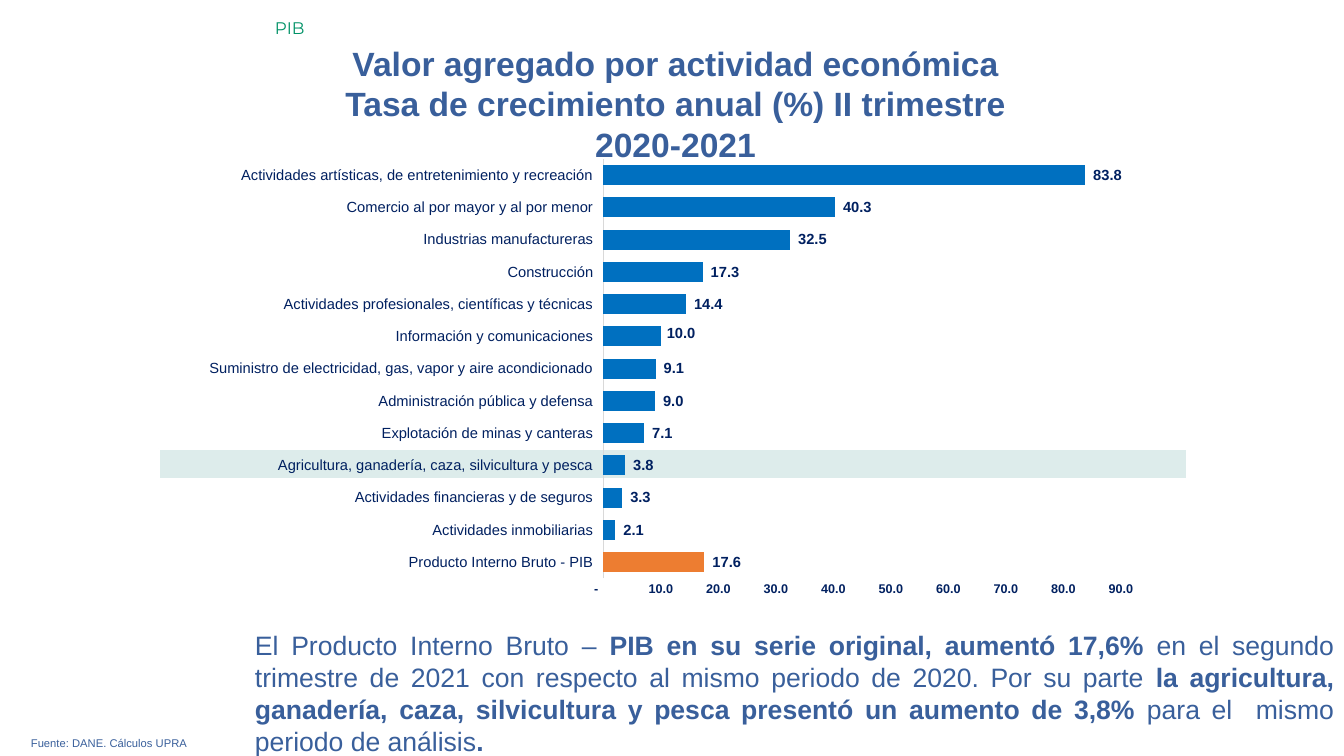
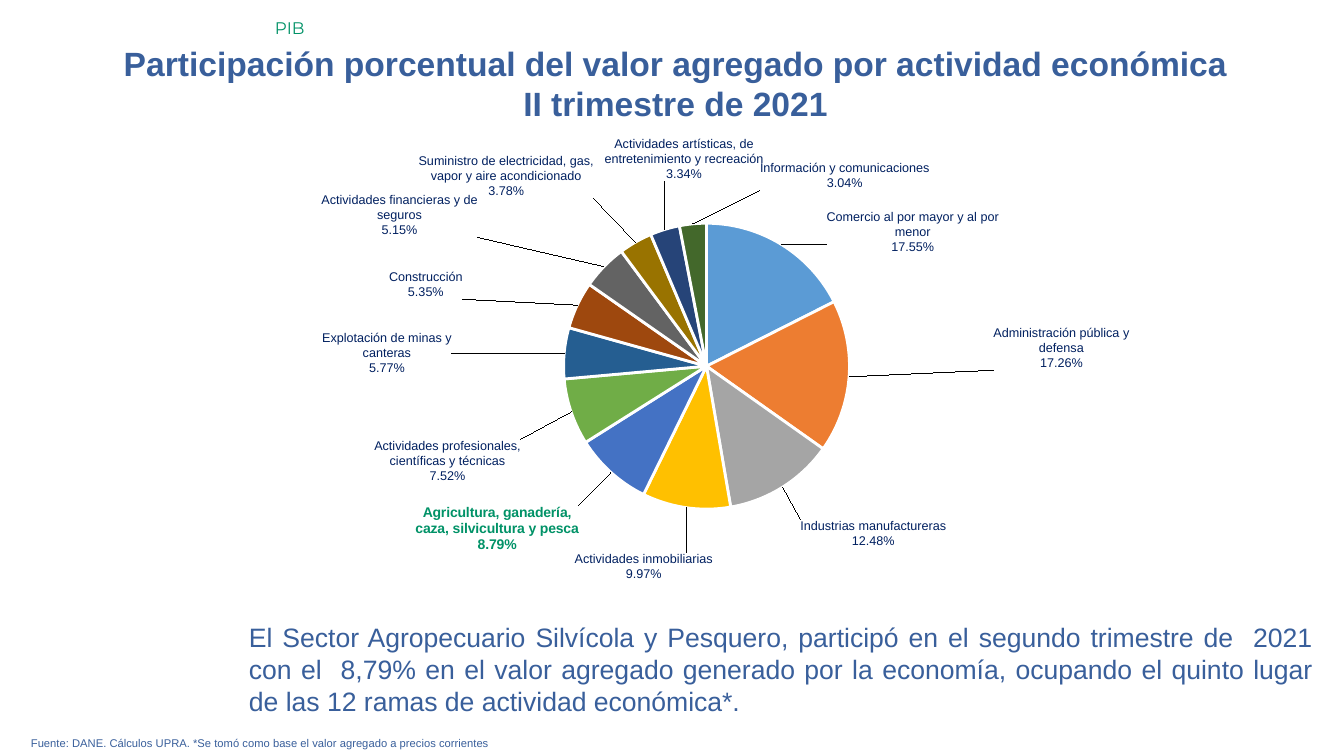
import pptx
import pptx.chart.data
import pptx.dml.color
import pptx.enum.chart
import pptx.enum.shapes
import pptx.enum.text
import pptx.oxml
import pptx.oxml.ns
import pptx.util
import math

PIXEL = 12192000 / 1344
RGBColor = pptx.dml.color.RGBColor
BLUE = RGBColor(0x39, 0x5F, 0x9B)
GREEN = RGBColor(0x00, 0x92, 0x67)
NAVY = RGBColor(0x00, 0x20, 0x60)
BAR_BLUE = RGBColor(0x00, 0x70, 0xC0)
ORANGE = RGBColor(0xED, 0x7D, 0x31)
TEAL = RGBColor(0x11, 0x7A, 0x76)
LIGHT_GRAY = RGBColor(0xD9, 0xD9, 0xD9)
WHITE = RGBColor(0xFF, 0xFF, 0xFF)
PIE_COLORS = [RGBColor.from_string(code) for code in (
    "5B9BD5", "ED7D31", "A5A5A5", "FFC000", "4472C4", "70AD47",
    "255E91", "9E480E", "636363", "997300", "264478", "43682B")]

TITLE = {"size": 24, "name": "Arial", "color": BLUE, "bold": True}
BODY = {"size": 19, "name": "Arial", "color": BLUE, "bold": False}
SOURCE = {"size": 8, "name": "Arial", "color": BLUE}
SECTION = {"size": 12, "name": "Montserrat", "color": GREEN}
CATEGORY = {"size": 10.5, "name": "Arial", "color": NAVY, "bold": False}
VALUE = {"size": 10.5, "name": "Arial", "color": NAVY, "bold": True}
SCALE = {"size": 9, "name": "Arial", "color": NAVY, "bold": True}
SLICE = {"size": 9, "name": "Arial", "color": NAVY, "bold": False}
SLICE_HIGHLIGHT = {"size": 10, "name": "Arial", "color": GREEN, "bold": True}
ACCOUNTING = '_-* #,##0.0_-;\\-* #,##0.0_-;_-* "-"??_-;'

CENTER = pptx.enum.text.PP_ALIGN.CENTER
JUSTIFY = pptx.enum.text.PP_ALIGN.JUSTIFY
LEFT = pptx.enum.text.PP_ALIGN.LEFT
qn = pptx.oxml.ns.qn


def apply_font(font, text_format):
    for name, value in text_format.items():
        if name == "color":
            font.color.rgb = value
        else:
            setattr(font, name, pptx.util.Pt(value) if name == "size" else value)


def place_label(label, number_format, offset_x, offset_y):
    """Shift a data label by fractions of the chart and give its number format."""
    element = label._dLbl
    namespace = pptx.oxml.ns.nsdecls("c")
    layout = pptx.oxml.parse_xml(
        f'<c:layout {namespace}><c:manualLayout><c:x val="{offset_x:.4f}"/>'
        f'<c:y val="{offset_y:.4f}"/></c:manualLayout></c:layout>')
    number = pptx.oxml.parse_xml(f'<c:numFmt {namespace} formatCode="" sourceLinked="0"/>')
    number.set("formatCode", number_format)
    element.insert(1, layout)
    element.insert(2, number)
    return element


presentation = pptx.Presentation()
presentation.slide_width = round(1344 * PIXEL)
presentation.slide_height = round(756 * PIXEL)

pages = [
    {"title": ["Valor agregado por actividad económica",
               "Tasa de crecimiento anual (%) II trimestre", "2020-2021"],
     "title_height": 132,
     "source": "Fuente: DANE. Cálculos UPRA",
     "body_box": (245, 624, 1099, 139),
     "body": [("El Producto Interno Bruto – ", False),
              ("PIB en su serie original, aumentó 17,6% ", True),
              ("en el segundo trimestre de 2021 con respecto al mismo periodo de 2020. "
               "Por su parte ", False),
              ("la agricultura, ganadería, caza, silvicultura y pesca presentó un aumento "
               "de 3,8%", True),
              (" para el  mismo periodo de análisis", False), (".", True)]},
    {"title": ["Participación porcentual del valor agregado por actividad económica",
               "II trimestre de 2021"],
     "title_height": 92,
     "source": "Fuente: DANE. Cálculos UPRA. *Se tomó como base el valor agregado "
               "a precios corrientes",
     "body_box": (239, 616, 1084, 107),
     "body": [("El Sector Agropecuario Silvícola y Pesquero, participó en el segundo trimestre "
               "de  2021 con el  8,79% en el valor agregado generado por la economía, ocupando "
               "el quinto lugar de las 12 ramas de actividad económica*.", False)]},
]

slides = []
for page in pages:
    slide = presentation.slides.add_slide(presentation.slide_layouts[5])
    slides.append(slide)
    blocks = [
        (slide.shapes.title, (45, 38, 1261, page["title_height"]),
         [[(line, True)] for line in page["title"]], TITLE, CENTER),
        (None, (21, 731, 1301, 24), [[(page["source"], False)]], SOURCE, JUSTIFY),
        (None, page["body_box"], [page["body"]], BODY, JUSTIFY),
        (None, (265, 13, 1079, 30), [[("PIB", False)]], SECTION, LEFT),
    ]
    for shape, box, paragraphs, text_format, alignment in blocks:
        shape = shape or slide.shapes.add_textbox(0, 0, 0, 0)
        shape.left, shape.top, shape.width, shape.height = [round(n * PIXEL) for n in box]
        frame = shape.text_frame
        frame.word_wrap = True
        frame.auto_size = pptx.enum.text.MSO_AUTO_SIZE.NONE
        frame.vertical_anchor = pptx.enum.text.MSO_ANCHOR.TOP
        for index, runs in enumerate(paragraphs):
            paragraph = frame.paragraphs[0] if index == 0 else frame.add_paragraph()
            paragraph.alignment = alignment
            for text, bold in runs:
                run = paragraph.add_run()
                run.text = text
                apply_font(run.font, {**text_format, "bold": bold})

# Growth by activity
growth_slide, share_slide = slides
highlight = growth_slide.shapes.add_shape(
    pptx.enum.shapes.MSO_SHAPE.RECTANGLE,
    *[round(n * PIXEL) for n in (159, 449, 1028, 30)])
highlight.shadow.inherit = False
highlight.fill.solid()
highlight.fill.fore_color.rgb = TEAL
color_element = highlight._element.spPr.find(qn("a:solidFill"))[0]
color_element.append(pptx.oxml.parse_xml(
    f'<a:alpha {pptx.oxml.ns.nsdecls("a")} val="14000"/>'))
highlight.line.color.rgb = WHITE
highlight.line.width = pptx.util.Pt(1)

growth = [
    ("Producto Interno Bruto - PIB", 17.6),
    ("Actividades inmobiliarias", 2.1),
    ("Actividades financieras y de seguros", 3.3),
    ("Agricultura, ganadería, caza, silvicultura y pesca", 3.8),
    ("Explotación de minas y canteras", 7.1),
    ("Administración pública y defensa", 9),
    ("Suministro de electricidad, gas, vapor y aire acondicionado", 9.1),
    ("Información y comunicaciones", 10),
    ("Actividades profesionales, científicas y técnicas", 14.4),
    ("Construcción", 17.3),
    ("Industrias manufactureras", 32.5),
    ("Comercio al por mayor y al por menor", 40.3),
    ("Actividades artísticas, de entretenimiento y recreación", 83.8),
]
growth_data = pptx.chart.data.CategoryChartData(number_format=ACCOUNTING)
growth_data.categories = [name for name, value in growth]
growth_data.add_series("Crecimiento anual", [value for name, value in growth])
growth_box = (190, 150, 966, 456)
bar_chart = growth_slide.shapes.add_chart(
    pptx.enum.chart.XL_CHART_TYPE.BAR_CLUSTERED,
    *[round(n * PIXEL) for n in growth_box], growth_data).chart
bar_chart.has_legend = False
bar_chart.has_title = False
apply_font(bar_chart.font, CATEGORY)
bar_plot = bar_chart.plots[0]
bar_plot.gap_width = 61
bar_plot.overlap = 65
bar_plot.vary_by_categories = False

category_axis, value_axis = bar_chart.category_axis, bar_chart.value_axis
for axis, text_format in ((category_axis, CATEGORY), (value_axis, SCALE)):
    axis.has_major_gridlines = False
    axis.major_tick_mark = pptx.enum.chart.XL_TICK_MARK.NONE
    axis.minor_tick_mark = pptx.enum.chart.XL_TICK_MARK.NONE
    apply_font(axis.tick_labels.font, text_format)
category_axis.tick_label_position = pptx.enum.chart.XL_TICK_LABEL_POSITION.LOW
category_axis.format.line.color.rgb = LIGHT_GRAY
category_axis.format.line.width = pptx.util.Pt(0.75)
value_axis.format.line.fill.background()
value_axis.minimum_scale = 0
value_axis.maximum_scale = 90
value_axis.major_unit = 10
value_axis.tick_labels.number_format = ACCOUNTING
value_axis.tick_labels.number_format_is_linked = False

bars = bar_plot.series[0]
bars.invert_if_negative = False
for item, color in ((bars, BAR_BLUE), (bars.points[0], ORANGE)):
    item.format.fill.solid()
    item.format.fill.fore_color.rgb = color
bar_labels = bars.data_labels
bar_labels.show_value = True
bar_labels.number_format = ACCOUNTING
bar_labels.number_format_is_linked = False
bar_labels.position = pptx.enum.chart.XL_LABEL_POSITION.OUTSIDE_END
apply_font(bar_labels.font, VALUE)
communications_label = bars.points[7].data_label
apply_font(communications_label.font, VALUE)
communications_label.position = pptx.enum.chart.XL_LABEL_POSITION.OUTSIDE_END
place_label(communications_label, ACCOUNTING, -2 / growth_box[2], -3 / growth_box[3])

# Share by activity: name, percentage, label corner that faces the pie
shares = [
    ("Comercio al por mayor y al por menor", 17.55, (827, 254)),
    ("Administración pública y defensa", 17.26, (994, 348)),
    ("Industrias manufactureras", 12.48, (801, 519)),
    ("Actividades inmobiliarias", 9.97, (713, 552)),
    ("Agricultura, ganadería, caza, silvicultura y pesca", 8.79, (579, 505)),
    ("Actividades profesionales, científicas y técnicas", 7.52, (521, 439)),
    ("Explotación de minas y canteras", 5.77, (452, 375)),
    ("Construcción", 5.35, (463, 299)),
    ("Actividades financieras y de seguros", 5.15, (478, 237)),
    ("Suministro de electricidad, gas, vapor y aire acondicionado", 3.78, (594, 198)),
    ("Actividades artísticas, de entretenimiento y recreación", 3.34, (764, 181)),
    ("Información y comunicaciones", 3.04, (930, 190)),
]
share_data = pptx.chart.data.CategoryChartData(number_format="0.00")
share_data.categories = [name for name, value, corner in shares]
share_data.add_series("Participación", [value for name, value, corner in shares])
share_box = (233, 137, 903, 493)
pie_chart = share_slide.shapes.add_chart(
    pptx.enum.chart.XL_CHART_TYPE.PIE,
    *[round(n * PIXEL) for n in share_box], share_data).chart
pie_chart.has_legend = False
pie_chart.has_title = False
apply_font(pie_chart.font, SLICE)

plot_area = pie_chart._chartSpace.chart.plotArea
for old_layout in plot_area.findall(qn("c:layout")):
    plot_area.remove(old_layout)
plot_area.insert(0, pptx.oxml.parse_xml(
    f'<c:layout {pptx.oxml.ns.nsdecls("c")}><c:manualLayout><c:layoutTarget val="inner"/>'
    '<c:xMode val="edge"/><c:yMode val="edge"/><c:x val="0.194"/><c:y val="0.175"/>'
    '<c:w val="0.661"/><c:h val="0.58"/></c:manualLayout></c:layout>'))

pie_plot = pie_chart.plots[0]
pie_plot.vary_by_categories = True
pie = pie_plot.series[0]
pie_labels = pie.data_labels
pie_labels.show_value = False
pie_labels.show_category_name = True
pie_labels.show_percentage = True
pie_labels.number_format = "0.00%"
pie_labels.number_format_is_linked = False
apply_font(pie_labels.font, SLICE)

pie_center_x, pie_center_y, label_radius = 707, 366, 149
total = sum(value for name, value, corner in shares)
start = 0
for index, (name, value, corner) in enumerate(shares):
    point = pie.points[index]
    point.format.fill.solid()
    point.format.fill.fore_color.rgb = PIE_COLORS[index]
    point.format.line.color.rgb = WHITE
    point.format.line.width = pptx.util.Pt(2)
    label = point.data_label
    apply_font(label.font, SLICE_HIGHLIGHT if name.startswith("Agricultura") else SLICE)
    label.position = pptx.enum.chart.XL_LABEL_POSITION.BEST_FIT
    angle = 2 * math.pi * (start + value / 2) / total
    start += value
    anchor_x = pie_center_x + label_radius * math.sin(angle)
    anchor_y = pie_center_y - label_radius * math.cos(angle)
    label_element = place_label(label, "0.00%", (corner[0] - anchor_x) / share_box[2],
                                (corner[1] - anchor_y) / share_box[3])
    for tag, shown in (("c:showVal", "0"), ("c:showCatName", "1"), ("c:showPercent", "1")):
        label_element.find(qn(tag)).set("val", shown)
    separator = pptx.oxml.parse_xml(f'<c:separator {pptx.oxml.ns.nsdecls("c")}/>')
    separator.text = "\n"
    label_element.append(separator)

presentation.save("out.pptx")
